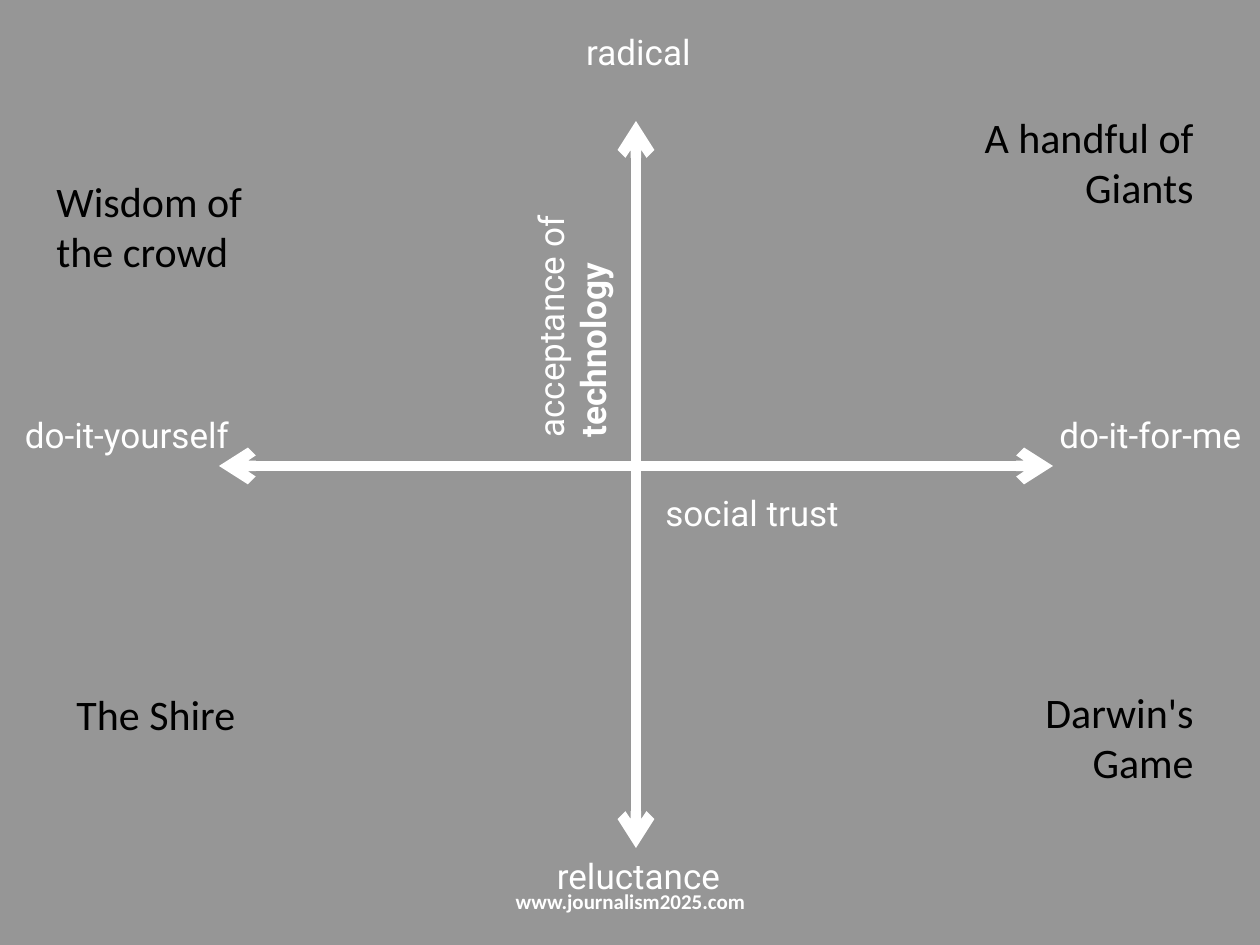
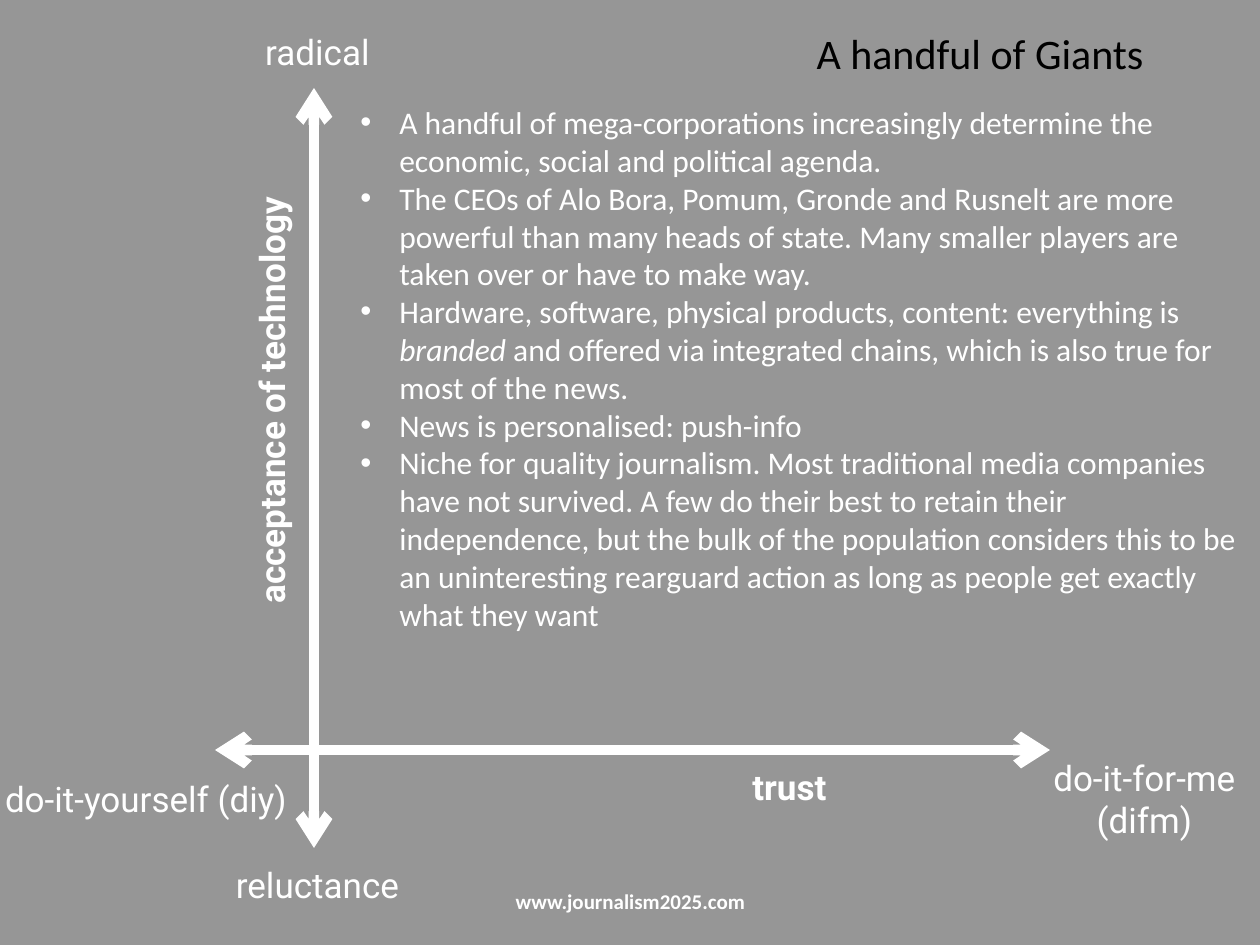
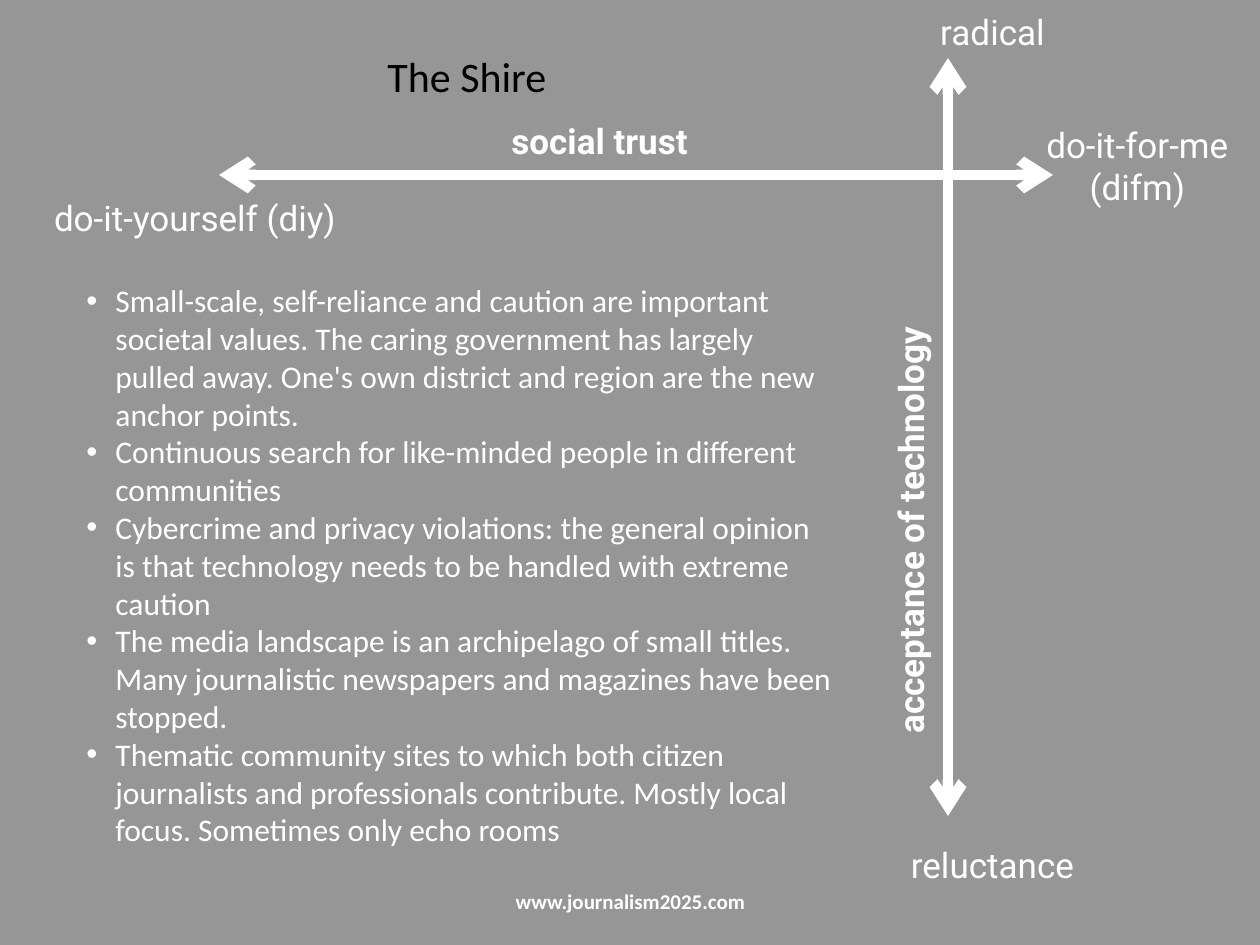
"""Build three slides of journalism scenarios placed on trust and technology axes."""
from dataclasses import dataclass

from lxml import etree
from pptx import Presentation
from pptx.dml.color import RGBColor
from pptx.enum import shapes, text
from pptx.oxml import ns
from pptx.util import Emu, Pt


@dataclass(frozen=True)
class Theme:
    """Colours, fonts and sizes shared by all slides."""
    back: str = "969696"
    light: str = "FFFFFF"
    dark: str = "000000"
    axis_font: str = "Roboto"
    font: str = "Calibri"
    title: int = 24
    axis: int = 20
    body: int = 18
    footer: int = 12
    line: int = 6


T = Theme()
PX = 914400 / 126
SIZE = 1260, 945
LEFT, CENTER, RIGHT = text.PP_ALIGN.LEFT, text.PP_ALIGN.CENTER, text.PP_ALIGN.RIGHT
FOOTER = "www.journalism2025.com", (431, 876, 399, 50)

STYLES = {
    "end": dict(font=T.axis_font, size=T.axis, align=CENTER),
    "axis": dict(font=T.axis_font, size=T.axis),
    "bold axis": dict(font=T.axis_font, size=T.axis, bold=True),
    "side axis": dict(font=T.axis_font, size=T.axis, rotation=270),
    "bold side axis": dict(font=T.axis_font, size=T.axis, bold=True, rotation=270),
    "title": dict(size=T.title, color=T.dark),
    "right title": dict(size=T.title, color=T.dark, align=RIGHT),
    "wide bullets": dict(size=T.body, hang=39),
    "bullets": dict(size=T.body, hang=29),
    "footer": dict(size=T.footer, bold=True, align=CENTER, anchor=text.MSO_ANCHOR.MIDDLE),
}

GIANTS = [
    "A handful of mega-corporations increasingly determine the economic, social and political agenda.",
    "The CEOs of Alo Bora, Pomum, Gronde and Rusnelt are more powerful than many heads of state. "
    "Many smaller players are taken over or have to make way.",
    "Hardware, software, physical products, content: everything is |branded| and offered via "
    "integrated chains, which is also true for most of the news.",
    "News is personalised: push-info",
    "Niche for quality journalism. Most traditional media companies have not survived. A few do "
    "their best to retain their independence, but the bulk of the population considers this to be "
    "an uninteresting rearguard action as long as people get exactly what they want",
]
SHIRE = [
    "Small-scale, self-reliance and caution are important societal values. The caring government "
    "has largely pulled away. One's own district and region are the new anchor points.",
    "Continuous search for like-minded people in different communities",
    "Cybercrime and privacy violations: the general opinion is that technology needs to be handled "
    "with extreme caution",
    "The media landscape is an archipelago of small titles. Many journalistic newspapers and "
    "magazines have been stopped.",
    "Thematic community sites to which both citizen journalists and professionals contribute. "
    "Mostly local focus. Sometimes only echo rooms",
]

SLIDES = [
    dict(
        axes=[(636, 848, 636, 121), (219, 466, 1053, 466)],
        texts=[
            ("axis", "social trust", (653, 485, 580, 55)),
            ("side axis", "acceptance of *technology*", (398, 228, 347, 97)),
            ("end", "do-it-for-me", (998, 407, 305, 55)),
            ("end", "do-it-yourself", (-35, 407, 324, 55)),
            ("end", "radical", (494, 24, 289, 55)),
            ("end", "reluctance", (495, 848, 287, 55)),
            ("title", "Wisdom of the crowd", (44, 169, 258, 115)),
            ("right title", "Darwin's Game", (948, 680, 258, 115)),
            ("right title", "A handful of Giants", (948, 105, 258, 115)),
            ("title", "The Shire", (64, 682, 258, 63)),
        ]),
    dict(
        axes=[(314, 848, 314, 88), (215, 750, 1050, 750)],
        texts=[
            ("bold axis", "trust", (740, 759, 580, 55)),
            ("bold side axis", "acceptance of technology", (14, 331, 515, 55)),
            ("end", "do-it-for-me (difm)", (992, 750, 305, 97)),
            ("end", "do-it-yourself (diy)", (-16, 771, 324, 55)),
            ("end", "radical", (173, 24, 289, 55)),
            ("end", "reluctance", (174, 857, 287, 55)),
            ("wide bullets", GIANTS, (348, 97, 907, 662)),
            ("right title", "A handful of Giants", (789, 21, 367, 64)),
        ]),
    dict(
        axes=[(948, 816, 948, 58), (219, 175, 1053, 175)],
        texts=[
            ("bold axis", "social trust", (499, 113, 662, 55)),
            ("bold side axis", "acceptance of technology", (665, 473, 491, 55)),
            ("end", "do-it-for-me (difm)", (985, 117, 305, 97)),
            ("end", "do-it-yourself (diy)", (33, 190, 324, 55)),
            ("end", "radical", (848, 4, 289, 55)),
            ("end", "reluctance", (849, 837, 287, 55)),
            ("bullets", SHIRE, (74, 275, 774, 585)),
            ("title", "The Shire", (375, 44, 466, 63)),
        ]),
]


def px(*values):
    """Turn pixel lengths into EMU."""
    return [Emu(round(v * PX)) for v in values]


def add_bullet(p, hang):
    """Give a paragraph a round bullet with a hanging indent."""
    pPr = p._p.get_or_add_pPr()
    indent, = px(hang)
    pPr.set("marL", str(indent))
    pPr.set("indent", str(-indent))
    etree.SubElement(pPr, ns.qn("a:buFont")).set("typeface", "Arial")
    etree.SubElement(pPr, ns.qn("a:buChar")).set("char", "•")


def add_text(s, content, box, *, size, font=T.font, color=T.light, bold=False, align=LEFT,
             anchor=text.MSO_ANCHOR.TOP, rotation=0, hang=0):
    """Add a text box; *stars* mark bold words and |bars| italic ones."""
    sp = s.shapes.add_textbox(*px(*box))
    sp.rotation = rotation
    tf = sp.text_frame
    tf.word_wrap = True
    tf.vertical_anchor = anchor
    lines = [content] if isinstance(content, str) else content
    for i, line in enumerate(lines):
        p = tf.add_paragraph() if i else tf.paragraphs[0]
        p.alignment = align
        if hang:
            add_bullet(p, hang)
        mark = "*" if "*" in line else "|"
        for j, part in enumerate(line.split(mark)):
            if not part:
                continue
            r = p.add_run()
            r.text = part
            r.font.name = font
            r.font.size = Pt(size)
            r.font.color.rgb = RGBColor.from_string(color)
            r.font.bold = bold or (mark == "*" and j % 2 == 1)
            r.font.italic = mark == "|" and j % 2 == 1


def add_axis(s, ends):
    """Add a line with an arrowhead at both ends."""
    axis = s.shapes.add_connector(shapes.MSO_CONNECTOR.STRAIGHT, *px(*ends))
    axis.line.width = Pt(T.line)
    axis.line.color.rgb = RGBColor.from_string(T.light)
    ln = axis.line._get_or_add_ln()
    for end in ("a:headEnd", "a:tailEnd"):
        etree.SubElement(ln, ns.qn(end)).set("type", "arrow")
    etree.SubElement(axis._element.spPr, ns.qn("a:effectLst"))


def main():
    """Build and save the presentation."""
    prs = Presentation()
    prs.slide_width, prs.slide_height = px(*SIZE)
    for content in SLIDES:
        s = prs.slides.add_slide(prs.slide_layouts[6])
        s.background.fill.solid()
        s.background.fill.fore_color.rgb = RGBColor.from_string(T.back)
        for ends in content["axes"]:
            add_axis(s, ends)
        for style, words, box in content["texts"] + [("footer", *FOOTER)]:
            add_text(s, words, box, **STYLES[style])
    prs.save("out.pptx")


if __name__ == "__main__":
    main()
